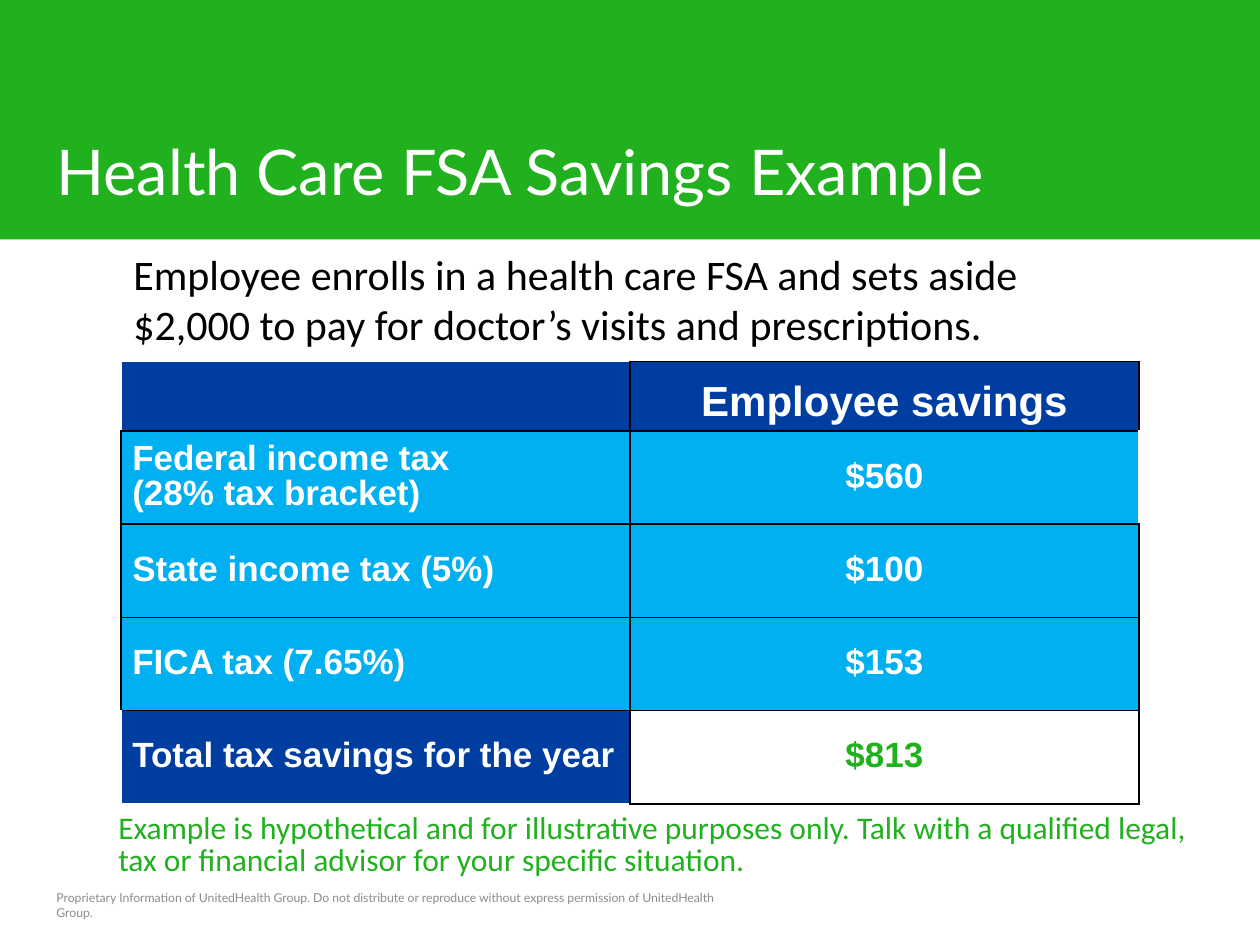
from lxml.etree import SubElement
from pptx import Presentation
from pptx.dml.color import RGBColor
from pptx.enum.shapes import MSO_SHAPE
from pptx.enum.text import MSO_ANCHOR, PP_ALIGN
from pptx.oxml.ns import qn
from pptx.util import Inches, Pt

COLORS = {
    "green": "21B01E",
    "navy": "003DA1",
    "sky": "00B0F0",
    "gray": "8C8C8C",
    "white": "FFFFFF",
    "black": "000000",
}

deck = Presentation()
deck.slide_width, deck.slide_height = Inches(10), Inches(7.5)
slide = deck.slides.add_slide(deck.slide_layouts[6])
x_percent, y_percent = deck.slide_width / 100, deck.slide_height / 100


def place(left, top, width, height):
    return [round(share * unit) for share, unit in
            zip((left, top, width, height), (x_percent, y_percent) * 2)]


def write(frame, words, size, face, color, spacing=None, bold=False):
    frame.text = words
    line = frame.paragraphs[0]
    line.line_spacing = spacing
    for run in line.runs:
        run.font.size, run.font.name, run.font.bold = Pt(size), face, bold
        run.font.color.rgb = RGBColor.from_string(COLORS[color])
    return line


banner = slide.shapes.add_shape(MSO_SHAPE.RECTANGLE, *place(0, 0, 100, 25.33))
banner.shadow.inherit = False
banner.fill.solid()
banner.fill.fore_color.rgb = RGBColor.from_string(COLORS["green"])
banner.line.fill.background()

passages = [
    ("Proprietary Information of UnitedHealth Group. Do not distribute or reproduce "
     "without express permission of UnitedHealth Group.",
     (3.5, 92.67, 55.7, 5.33), 7, "Lato", "gray", None, MSO_ANCHOR.BOTTOM),
    ("Health Care FSA Savings Example",
     (3.5, 13.33, 85.9, 12), 36, "Lato", "white", None, MSO_ANCHOR.TOP),
    ("Employee enrolls in a health care FSA and sets aside $2,000 to pay for "
     "doctor’s visits and prescriptions.",
     (9.6, 25.6, 79.8, 12.13), 24, "Calibri", "black", None, MSO_ANCHOR.TOP),
    ("Example is hypothetical and for illustrative purposes only. Talk with a "
     "qualified legal, tax or financial advisor for your specific situation.",
     (8.4, 85.47, 88.9, 8.27), 18, "Calibri", "green", 0.85, MSO_ANCHOR.TOP),
]
for words, area, size, face, color, spacing, anchor in passages:
    frame = slide.shapes.add_textbox(*place(*area)).text_frame
    frame.word_wrap = True
    frame.vertical_anchor = anchor
    write(frame, words, size, face, color, spacing)

savings_rows = [
    ("", "Employee savings"),
    ("Federal income tax\v(28% tax bracket)", "$560"),
    ("State income tax (5%)", "$100"),
    ("FICA tax (7.65%)", "$153"),
    ("Total tax savings for the year", "$813"),
]
last = len(savings_rows) - 1
fills = {(0, 0): "navy", (0, 1): "navy", (last, 0): "navy", (last, 1): None}
white_edges = {(0, 0): "LT", (1, 1): "R", (last, 0): "LB"}

savings = slide.shapes.add_table(
    len(savings_rows), 2, *place(9.6, 38.27, 80.8, 46.8)).table
for column in savings.columns:
    column.width = round(40.4 * x_percent)
for r, entries in enumerate(savings_rows):
    savings.rows[r].height = round((9.87 if r else 7.33) * y_percent)
    for c, words in enumerate(entries):
        cell = savings.cell(r, c)
        cell.margin_left = cell.margin_right = Inches(0.09)
        cell.margin_top = cell.margin_bottom = Inches(0.05)
        cell.vertical_anchor = MSO_ANCHOR.MIDDLE if r else MSO_ANCHOR.BOTTOM
        for side in "LRTB":
            edge = SubElement(cell._tc.get_or_add_tcPr(), qn(f"a:ln{side}"), w=str(Pt(1)))
            ink = "white" if side in white_edges.get((r, c), "") else "black"
            SubElement(SubElement(edge, qn("a:solidFill")), qn("a:srgbClr"), val=COLORS[ink])
        fill = fills.get((r, c), "sky")
        if fill:
            cell.fill.solid()
            cell.fill.fore_color.rgb = RGBColor.from_string(COLORS[fill])
        else:
            cell.fill.background()
        entry = write(cell.text_frame, words, 20 if r else 24, "Arial",
                      "white" if fill else "green", 0.9, True)
        entry.alignment = PP_ALIGN.CENTER if c else PP_ALIGN.LEFT

deck.save("out.pptx")
